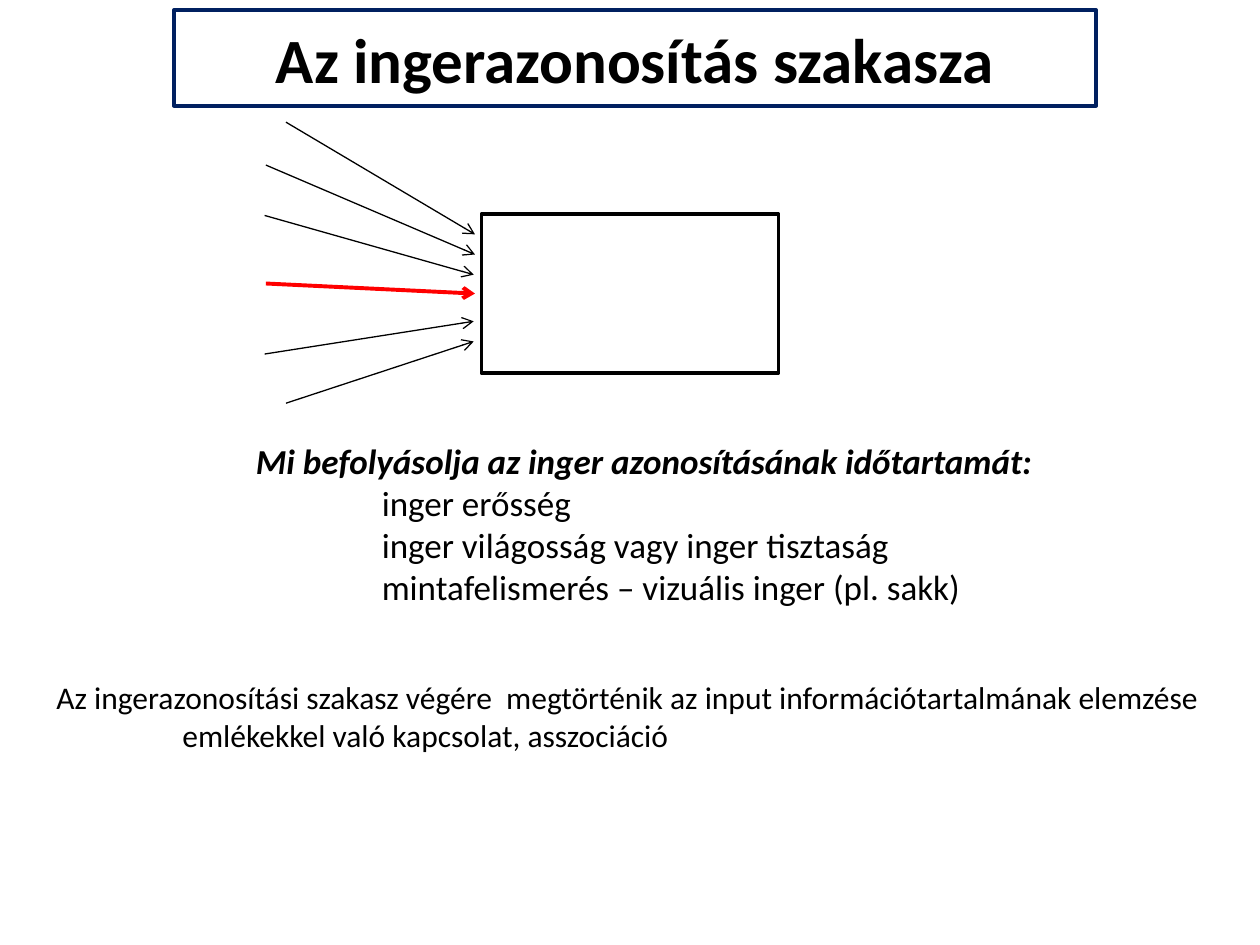
from dataclasses import dataclass

from lxml import etree
from pptx import Presentation
from pptx.dml.color import RGBColor as RGB
from pptx.enum.shapes import MSO_CONNECTOR as CONN, MSO_SHAPE as SHAPE
from pptx.enum.text import MSO_ANCHOR as ANCHOR, MSO_AUTO_SIZE as AUTO, PP_ALIGN as ALIGN
from pptx.oxml.ns import qn
from pptx.util import Inches, Pt


@dataclass(frozen=True)
class Theme:
    font: str = "Calibri"
    black: RGB = RGB(0, 0, 0)
    white: RGB = RGB(255, 255, 255)
    navy: RGB = RGB(0x00, 0x20, 0x60)
    red: RGB = RGB(255, 0, 0)
    title: int = 36
    body: int = 20
    note: int = 18
    frame: float = 2
    thin: float = 0.75
    thick: float = 2.25


T = Theme()

# Stimuli: start x, y and end x, y in inches, from top to bottom
ORDINARY = [
    (2.27, 0.97, 3.77, 1.86),
    (2.11, 1.31, 3.77, 2.02),
    (2.1, 1.71, 3.76, 2.18),
    (2.1, 2.81, 3.76, 2.55),
    (2.27, 3.2, 3.76, 2.71),
]
RELEVANT = (2.11, 2.25, 3.77, 2.33)


def place(sp, x, y, w, h):
    sp.left, sp.top, sp.width, sp.height = map(Inches, (x, y, w, h))


def outline(sp, color, width):
    sp.line.color.rgb = color
    sp.line.width = Pt(width)


def write(sp, lines, size, indent=0, align=ALIGN.LEFT):
    """One paragraph per line; every line after the first is indented."""
    tf = sp.text_frame
    tf.word_wrap = True
    tf.auto_size = AUTO.NONE
    tf.text = "\n".join(lines)
    for i, p in enumerate(tf.paragraphs):
        pPr = p._p.get_or_add_pPr()
        pPr.set("marL", str(Inches(indent if i else 0)))
        pPr.set("indent", "0")
        etree.SubElement(pPr, qn("a:buNone"))
        p.alignment = align
        p.space_before = Pt(0)
        for r in p.runs:
            r.font.name, r.font.size = T.font, Pt(size)
            r.font.color.rgb = T.black
    return tf.paragraphs[0].runs[0].font


def add_box(slide, x, y, w, h):
    sp = slide.shapes.add_shape(SHAPE.RECTANGLE, *map(Inches, (x, y, w, h)))
    sp.shadow.inherit = False
    sp.fill.solid()
    sp.fill.fore_color.rgb = T.white
    outline(sp, T.black, T.frame)


def add_arrow(slide, ends, color, width):
    sp = slide.shapes.add_connector(CONN.STRAIGHT, *map(Inches, ends))
    outline(sp, color, width)
    etree.SubElement(sp.line._get_or_add_ln(), qn("a:tailEnd"), type="arrow")
    etree.SubElement(sp._element.spPr, qn("a:effectLst"))


def main():
    prs = Presentation()
    prs.slide_width, prs.slide_height = Inches(10), Inches(7.5)
    slide = prs.slides.add_slide(prs.slide_layouts[1])
    title, body = slide.placeholders

    # Framed title
    place(title, 1.38, 0.08, 7.32, 0.76)
    outline(title, T.navy, T.frame)
    write(title, ["Az ingerazonosítás szakasza"], T.title, align=ALIGN.CENTER).bold = True
    title.text_frame.vertical_anchor = ANCHOR.MIDDLE

    # Stimuli reaching the processing stage
    add_box(slide, 3.82, 1.7, 2.36, 1.26)
    for ends in ORDINARY:
        add_arrow(slide, ends, T.black, T.thin)
    add_arrow(slide, RELEVANT, T.red, T.thick)

    # Factors of identification time
    place(body, 1.93, 3.44, 6.46, 1.78)
    heading = write(body, [
        "Mi befolyásolja az inger azonosításának időtartamát:",
        "inger erősség",
        "inger világosság vagy inger tisztaság",
        "mintafelismerés – vizuális inger (pl. sakk)",
    ], T.body, indent=1)
    heading.bold = heading.italic = True

    # Outcome of the stage
    note = slide.shapes.add_textbox(*map(Inches, (0.35, 5.33, 9.37, 0.71)))
    write(note, [
        "Az ingerazonosítási szakasz végére  megtörténik az input információtartalmának elemzése",
        "emlékekkel való kapcsolat, asszociáció",
    ], T.note, indent=1)

    prs.save("out.pptx")


if __name__ == "__main__":
    main()
